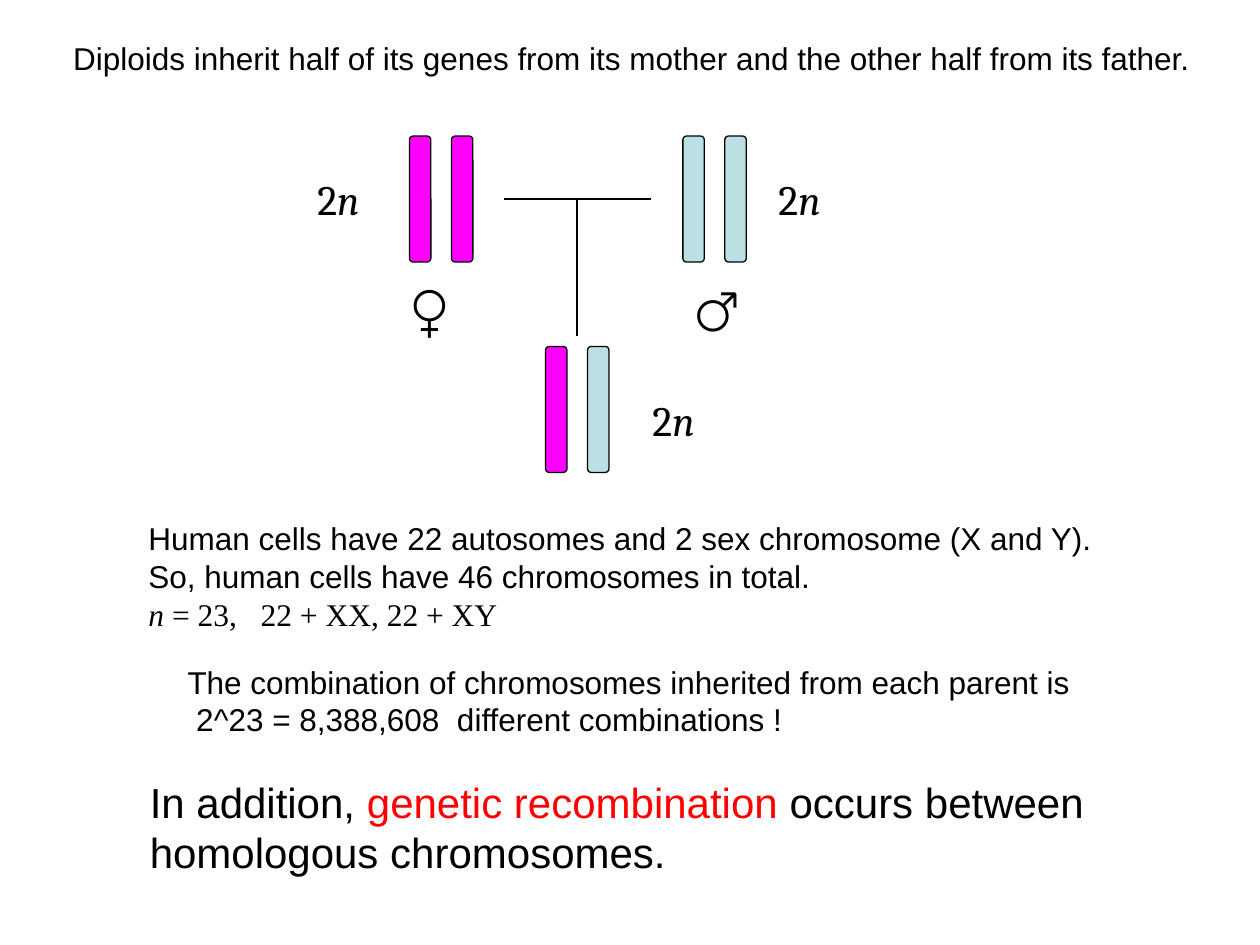
from pptx import Presentation
from pptx.dml.color import RGBColor
from pptx.enum.shapes import MSO_CONNECTOR, MSO_SHAPE
from pptx.enum.text import MSO_ANCHOR, MSO_AUTO_SIZE, PP_ALIGN
from pptx.oxml.ns import qn
from pptx.util import Inches, Pt
from lxml.etree import SubElement

COLORS = {
    "ink": "000000",
    "maternal": "FF00FF",
    "paternal": "BBE0E3",
    "highlight": "FF0000",
}


def color(name):
    return RGBColor.from_string(COLORS[name])


def write(holder, paragraphs, size, font="Arial", wrap=False):
    """Fill a text holder; each paragraph is a list of (text, run format) pairs."""
    frame = holder.text_frame
    frame.word_wrap = wrap
    frame.auto_size = MSO_AUTO_SIZE.NONE
    frame.vertical_anchor = MSO_ANCHOR.TOP
    for index, runs in enumerate(paragraphs):
        paragraph = frame.add_paragraph() if index else frame.paragraphs[0]
        paragraph.alignment = PP_ALIGN.LEFT
        paragraph.line_spacing = 1.0
        paragraph.space_before = Pt(0)
        paragraph.font.size = Pt(size)
        paragraph.font.name = font
        paragraph.font.color.rgb = color("ink")
        for text, style in runs:
            run = paragraph.add_run()
            run.text = text
            if "font" in style:
                run.font.name = style["font"]
            if "italic" in style:
                run.font.italic = style["italic"]
            if "color" in style:
                run.font.color.rgb = color(style["color"])


prs = Presentation()
prs.slide_width = Inches(10)
prs.slide_height = Inches(7.5)
slide = prs.slides.add_slide(prs.slide_layouts[5])
shapes = slide.shapes

# Title sentence
title = shapes.title
title.left, title.top = Inches(0.48), Inches(0.26)
title.width, title.height = Inches(9.08), Inches(0.4)
write(title, [[("Diploids inherit half of its genes from its mother "
                "and the other half from its father.", {})]], 18)

# Chromosome pairs: mother, father, child
pairs = [
    (3.25, 1.08, ("maternal", "maternal")),
    (5.42, 1.08, ("paternal", "paternal")),
    (4.33, 2.75, ("maternal", "paternal")),
]
for left, top, origins in pairs:
    for position, origin in enumerate(origins):
        chromosome = shapes.add_shape(
            MSO_SHAPE.ROUNDED_RECTANGLE, Inches(left + position / 3),
            Inches(top), Inches(0.17), Inches(1))
        chromosome.shadow.inherit = False
        chromosome.fill.solid()
        chromosome.fill.fore_color.rgb = color(origin)
        chromosome.line.color.rgb = color("ink")
        chromosome.line.width = Pt(0.75)

# Mating line and descent line
for x1, y1, x2, y2 in [(4, 1.58, 5.17, 1.58), (4.58, 1.58, 4.58, 2.67)]:
    pedigree_line = shapes.add_connector(
        MSO_CONNECTOR.STRAIGHT, Inches(x1), Inches(y1), Inches(x2), Inches(y2))
    pedigree_line.line.color.rgb = color("ink")
    pedigree_line.line.width = Pt(0.75)
    SubElement(pedigree_line._element.spPr, qn("a:effectLst"))

# Sex symbols
for left, symbol in [(3.17, "♀"), (5.42, "♂")]:
    sex = shapes.add_textbox(Inches(left), Inches(2.17), Inches(0.59), Inches(0.59))
    write(sex, [[(symbol, {})]], 28, "Cambria")

# Ploidy labels
for left, top in [(2.42, 1.33), (6.08, 1.33), (5.08, 3.08)]:
    ploidy = shapes.add_textbox(Inches(left), Inches(top), Inches(0.81), Inches(0.5))
    write(ploidy, [[("2", {}), ("n", {"italic": True})]], 24, "Cambria", wrap=True)

# Chromosome count
count = shapes.add_textbox(Inches(1.08), Inches(4.07), Inches(7.69), Inches(1.01))
write(count, [
    [("Human cells have 22 autosomes and 2 sex chromosome (X and Y).", {})],
    [("So, human cells have 46 chromosomes in total.", {})],
    [("n", {"font": "Times New Roman", "italic": True}),
     (" = 23,   22 + XX, 22 + XY", {"font": "Times New Roman"})],
], 18)

# Number of combinations
combinations = shapes.add_textbox(Inches(1.39), Inches(5.21), Inches(7.27), Inches(0.71))
write(combinations, [
    [("The combination of chromosomes inherited from each parent is", {})],
    [(" 2^23 = 8,388,608  different combinations !", {})],
], 18)

# Recombination
recombination = shapes.add_textbox(Inches(1.09), Inches(6.11), Inches(8.42), Inches(0.91))
write(recombination, [[
    ("In addition, ", {}),
    ("genetic recombination", {"color": "highlight"}),
    (" occurs between homologous chromosomes.", {}),
]], 24, wrap=True)

prs.save("out.pptx")
